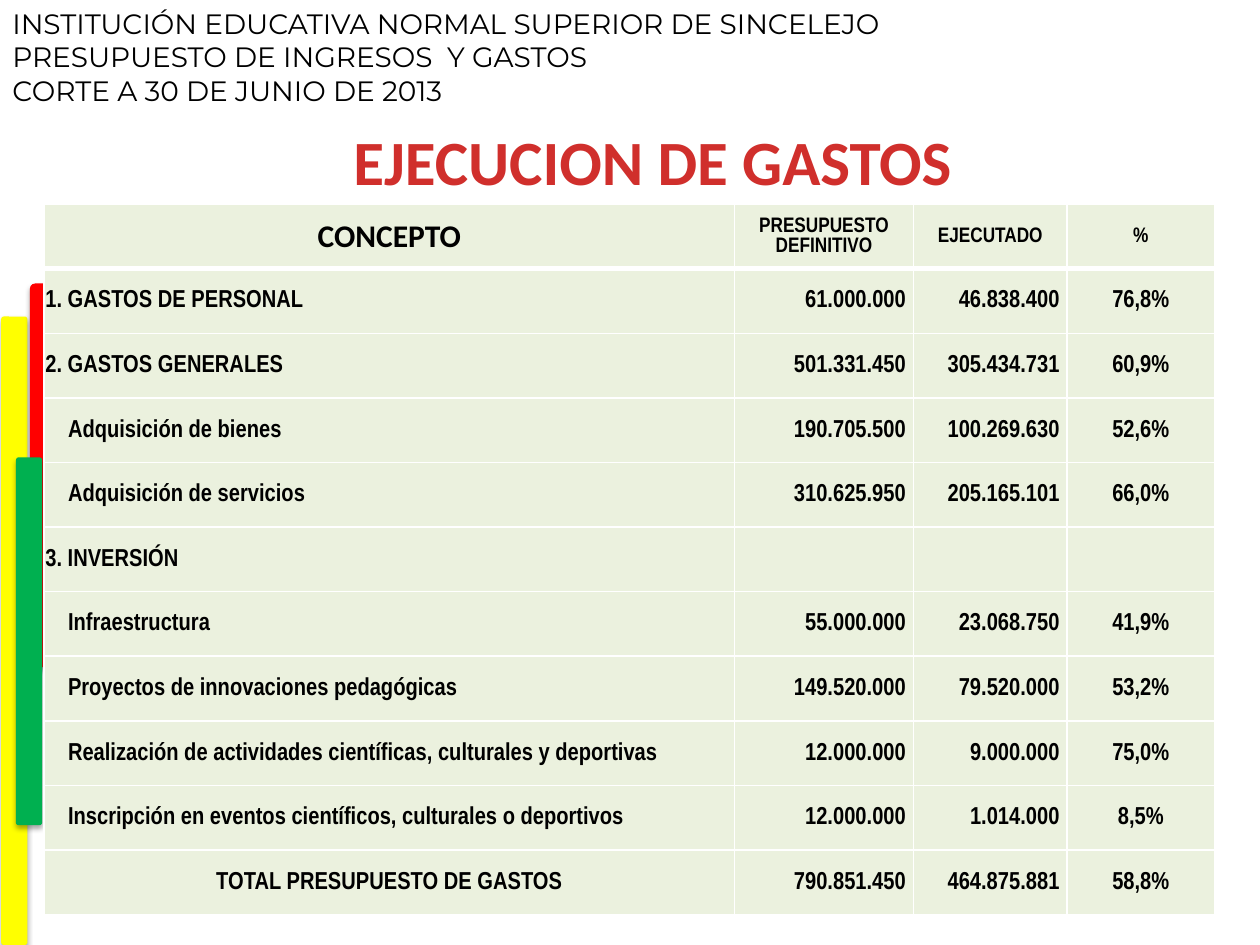
from dataclasses import dataclass

from lxml import etree
from pptx import Presentation
from pptx.dml.color import RGBColor
from pptx.enum.shapes import MSO_SHAPE
from pptx.enum.text import MSO_ANCHOR, PP_ALIGN
from pptx.oxml.ns import qn
from pptx.util import Inches, Pt

ROUND = MSO_SHAPE.ROUNDED_RECTANGLE
MIDDLE = MSO_ANCHOR.MIDDLE
LEFT, CENTER, RIGHT = PP_ALIGN.LEFT, PP_ALIGN.CENTER, PP_ALIGN.RIGHT


@dataclass(frozen=True)
class Theme:
    ink: str = "000000"
    title: str = "D02F2C"
    cell: str = "EBF1DE"
    rule: str = "FFFFFF"
    yellow: str = "FFFF00"
    red: str = "FF0000"
    green: str = "00B050"
    head_font: str = "Montserrat"
    title_font: str = "Calibri"
    body_font: str = "Arial Narrow"
    head_size: int = 16
    title_size: int = 36
    first_size: int = 18
    label_size: int = 12
    body_size: int = 14


THEME = Theme()
HEADING = (
    "INSTITUCIÓN EDUCATIVA NORMAL SUPERIOR DE SINCELEJO",
    "PRESUPUESTO DE INGRESOS  Y GASTOS",
    "CORTE A 30 DE JUNIO DE 2013",
)
LABELS = ("CONCEPTO", "PRESUPUESTO DEFINITIVO", "EJECUTADO", "%")
# Indent level, then one value for each column
ROWS = (
    (0, "1. GASTOS DE PERSONAL", "61.000.000", "46.838.400", "76,8%"),
    (0, "2. GASTOS GENERALES", "501.331.450", "305.434.731", "60,9%"),
    (1, "Adquisición de bienes", "190.705.500", "100.269.630", "52,6%"),
    (1, "Adquisición de servicios", "310.625.950", "205.165.101", "66,0%"),
    (0, "3. INVERSIÓN", "", "", ""),
    (1, "Infraestructura", "55.000.000", "23.068.750", "41,9%"),
    (1, "Proyectos de innovaciones pedagógicas",
     "149.520.000", "79.520.000", "53,2%"),
    (1, "Realización de actividades científicas, culturales y deportivas",
     "12.000.000", "9.000.000", "75,0%"),
    (1, "Inscripción en eventos científicos, culturales o deportivos",
     "12.000.000", "1.014.000", "8,5%"),
    (0, "TOTAL PRESUPUESTO DE GASTOS",
     "790.851.450", "464.875.881", "58,8%"),
)
COLS = (5.48, 1.42, 1.22, 1.17)
INDENT = 0.18


def style(par, name, size, color, bold=False, align=LEFT):
    par.alignment = align
    font = par.font
    font.name, font.size, font.bold = name, Pt(size), bold
    font.color.rgb = RGBColor.from_string(color)


def tint(parent, color, alpha=None):
    fill = etree.SubElement(parent, qn("a:solidFill"))
    rgb = etree.SubElement(fill, qn("a:srgbClr"), val=color)
    if alpha:
        etree.SubElement(rgb, qn("a:alpha"), val=str(alpha * 1000))


def shade(shape):
    """Give the shape a soft shadow that falls straight down."""
    shape.shadow.inherit = False
    effects = shape._element.spPr.find(qn("a:effectLst"))
    outer = etree.SubElement(
        effects, qn("a:outerShdw"), blurRad=str(Pt(3.1)), dist=str(Pt(1.8)),
        dir="5400000", rotWithShape="0")
    rgb = etree.SubElement(outer, qn("a:srgbClr"), val=THEME.ink)
    etree.SubElement(rgb, qn("a:alpha"), val="35000")


def add_bars(slide, box):
    """Draw the flag bars; each is given as shares of the box."""
    left, top, width, height = box
    bars = (
        (THEME.yellow, 0, 0.05, 0.32, 0.95),
        (THEME.red, 0.35, 0, 0.65, 0.58),
        (THEME.green, 0.18, 0.263, 0.32, 0.556),
    )
    group = slide.shapes.add_group_shape()
    for color, x, y, w, h in bars:
        bar = group.shapes.add_shape(
            ROUND, Inches(left + x * width), Inches(top + y * height),
            Inches(w * width), Inches(h * height))
        bar.adjustments[0] = 0.1
        bar.fill.solid()
        bar.fill.fore_color.rgb = RGBColor.from_string(color)
        bar.line.fill.background()
        shade(bar)


def add_heading(slide, box):
    frame = slide.shapes.add_textbox(*map(Inches, box)).text_frame
    frame.word_wrap = True
    frame.text = "\n".join(HEADING)
    for par in frame.paragraphs:
        style(par, THEME.head_font, THEME.head_size, THEME.ink)


def set_title(slide, box):
    title = slide.shapes.title
    title.left, title.top, title.width, title.height = map(Inches, box)
    frame = title.text_frame
    frame.text = "EJECUCION DE GASTOS"
    frame.word_wrap = False
    frame.vertical_anchor = MIDDLE
    style(frame.paragraphs[0], THEME.title_font, THEME.title_size,
          THEME.title, True, CENTER)


def paint(cell, base=1):
    """Set the rules and fill of a cell; base is the width of its lower rule."""
    props = cell._tc.get_or_add_tcPr()
    for side, width in (("L", 1), ("R", 1), ("T", 1), ("B", base)):
        rule = etree.SubElement(props, qn("a:ln" + side), w=str(Pt(width)))
        tint(rule, THEME.rule)
    cell.fill.solid()
    cell.fill.fore_color.rgb = RGBColor.from_string(THEME.cell)


def fill_cell(cell, text, size, align, name=THEME.body_font,
              indent=0, right=0.01):
    cell.text = text
    cell.vertical_anchor = MIDDLE
    cell.margin_left = cell.margin_top = Inches(0.01)
    cell.margin_right, cell.margin_bottom = Inches(right), 0
    par = cell.text_frame.paragraphs[0]
    if indent:
        par._p.get_or_add_pPr().set("marL", str(Inches(indent)))
    style(par, name, size, THEME.ink, True, align)


def add_budget(slide, box):
    count = len(ROWS) + 1
    table = slide.shapes.add_table(
        count, len(COLS), *map(Inches, box)).table
    table.horz_banding = False
    for col, width in zip(table.columns, COLS):
        col.width = Inches(width * box[2] / sum(COLS))
    for row in table.rows:
        row.height = Inches(box[3] / count)

    for c, label in enumerate(LABELS):
        cell = table.cell(0, c)
        paint(cell, 3)
        name, size = ((THEME.body_font, THEME.label_size) if c
                      else (THEME.title_font, THEME.first_size))
        fill_cell(cell, label, size, CENTER, name)

    for r, (level, *values) in enumerate(ROWS, 1):
        first = CENTER if r == len(ROWS) else LEFT
        for c, (text, align) in enumerate(
                zip(values, (first, RIGHT, RIGHT, CENTER))):
            cell = table.cell(r, c)
            paint(cell)
            fill_cell(cell, text, THEME.body_size, align,
                      indent=0 if c else level * INDENT,
                      right=0.06 if align == RIGHT else 0.01)


def main():
    deck = Presentation()
    deck.slide_width, deck.slide_height = Inches(10), Inches(7.5)
    slide = deck.slides.add_slide(deck.slide_layouts[5])
    add_bars(slide, (0.01, 2.25, 0.65, 5.25))
    add_heading(slide, (0, 0, 10, 0.94))
    set_title(slide, (2.68, 0.92, 5, 0.71))
    add_budget(slide, (0.35, 1.62, 9.29, 5.64))
    deck.save("out.pptx")


if __name__ == "__main__":
    main()
